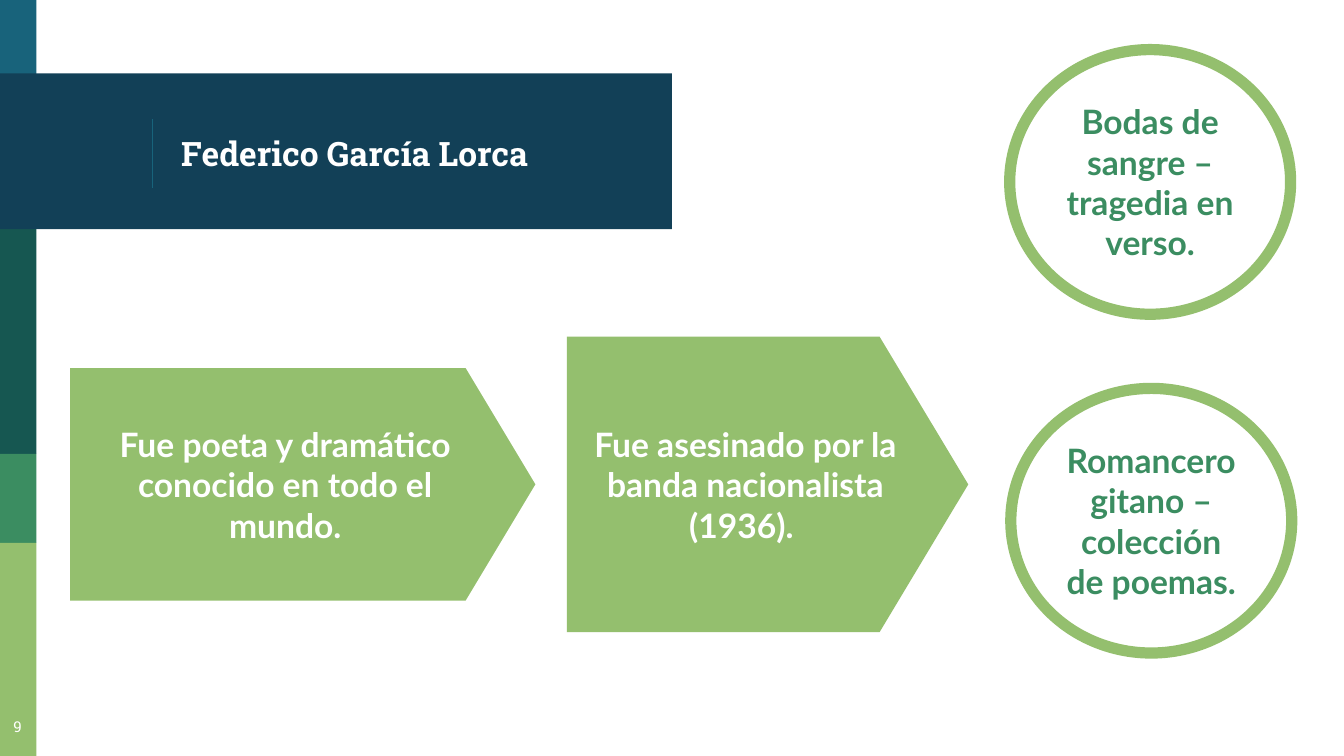
from dataclasses import dataclass

from lxml import etree
from pptx import Presentation
from pptx.dml.color import RGBColor
from pptx.enum.shapes import MSO_CONNECTOR, MSO_SHAPE
from pptx.enum.text import MSO_ANCHOR, PP_ALIGN
from pptx.oxml.ns import qn
from pptx.util import Pt

RECT, OVAL, ARROW = MSO_SHAPE.RECTANGLE, MSO_SHAPE.OVAL, MSO_SHAPE.PENTAGON
LINE = MSO_CONNECTOR.STRAIGHT
LEFT, CENTER = PP_ALIGN.LEFT, PP_ALIGN.CENTER
TOP, MIDDLE = MSO_ANCHOR.TOP, MSO_ANCHOR.MIDDLE


@dataclass(frozen=True)
class Theme:
    blue: str = "18637B"
    navy: str = "124057"
    teal: str = "165751"
    green: str = "3B8D61"
    lime: str = "94BF6E"
    white: str = "FFFFFF"
    head: str = "Roboto Slab"
    body: str = "Lato"
    big: float = 18
    small: float = 8
    ring: float = 6
    hair: float = 0.75
    inset: float = 7.2


THEME = Theme()


def color(code):
    return RGBColor.from_string(code)


def apply(obj, values):
    for name, value in values.items():
        setattr(obj, name, value)


def write(shape, text, tint, font=THEME.body, size=THEME.big, bold=True,
          align=CENTER, anchor=MIDDLE):
    frame = shape.text_frame
    sides = ("left", "top", "right", "bottom")
    apply(frame, {f"margin_{side}": Pt(THEME.inset) for side in sides})
    apply(frame, {"word_wrap": True, "vertical_anchor": anchor})
    para = frame.paragraphs[0]
    para.alignment = align
    run = para.add_run()
    run.text = text
    apply(run.font, {"name": font, "size": Pt(size), "bold": bold})
    run.font.color.rgb = color(tint)


def add_form(slide, kind, box, fill=None, edge=None):
    shape = slide.shapes.add_shape(kind, *map(Pt, box))
    shape.shadow.inherit = False
    if fill:
        shape.fill.solid()
        shape.fill.fore_color.rgb = color(fill)
    else:
        shape.fill.background()
    if edge:
        shape.line.color.rgb = color(edge)
        shape.line.width = Pt(THEME.ring)
    else:
        shape.line.fill.background()
    return shape


def add_label(slide, box, text, **style):
    label = slide.shapes.add_textbox(*map(Pt, box))
    write(label, text, THEME.white, font=THEME.head, **style)


def add_rule(slide, x, top, end):
    rule = slide.shapes.add_connector(LINE, Pt(x), Pt(top), Pt(x), Pt(end))
    rule.line.color.rgb = color(THEME.blue)
    rule.line.width = Pt(THEME.hair)
    etree.SubElement(rule._element.spPr, qn("a:effectLst"))


def add_arrow(slide, box, text):
    arrow = add_form(slide, ARROW, box, fill=THEME.lime)
    arrow.adjustments[0] = 0.3
    write(arrow, text, THEME.white)


def add_ring(slide, left, top, text):
    ring = add_form(slide, OVAL, (left, top, 150.5, 141.8), edge=THEME.lime)
    write(ring, text, THEME.green)


def main():
    deck = Presentation()
    apply(deck, {"slide_width": Pt(720), "slide_height": Pt(405)})
    slide = deck.slides.add_slide(deck.slide_layouts[6])

    # Side stripes
    stripes = [(0, 41.8, THEME.blue), (122.6, 243.2, THEME.teal),
               (243.2, 290.8, THEME.green), (290.8, 405, THEME.lime)]
    for top, end, fill in stripes:
        add_form(slide, RECT, (0, top, 19.5, end - top), fill=fill)

    # Title banner
    add_form(slide, RECT, (0, 39.4, 360, 83.4), fill=THEME.navy)
    add_rule(slide, 81.8, 64, 100.8)
    add_label(slide, (90, 41.8, 252.7, 80.6), "Federico García Lorca",
              align=LEFT)

    # Life facts
    add_arrow(slide, (37.5, 197.2, 249.3, 124.6),
              "Fue poeta y dramático conocido en todo el mundo.")
    add_arrow(slide, (303.7, 180.4, 215, 158.3),
              "Fue asesinado por la banda nacionalista (1936). ")

    # Works
    add_ring(slide, 540.9, 26.6, "Bodas de sangre – tragedia en verso.")
    add_ring(slide, 541.5, 208.1, "Romancero gitano – colección de poemas.")

    # Page number
    add_label(slide, (-4.3, 379.4, 27.4, 25.2), "9", size=THEME.small,
              bold=False, anchor=TOP)

    deck.save("out.pptx")


if __name__ == "__main__":
    main()
